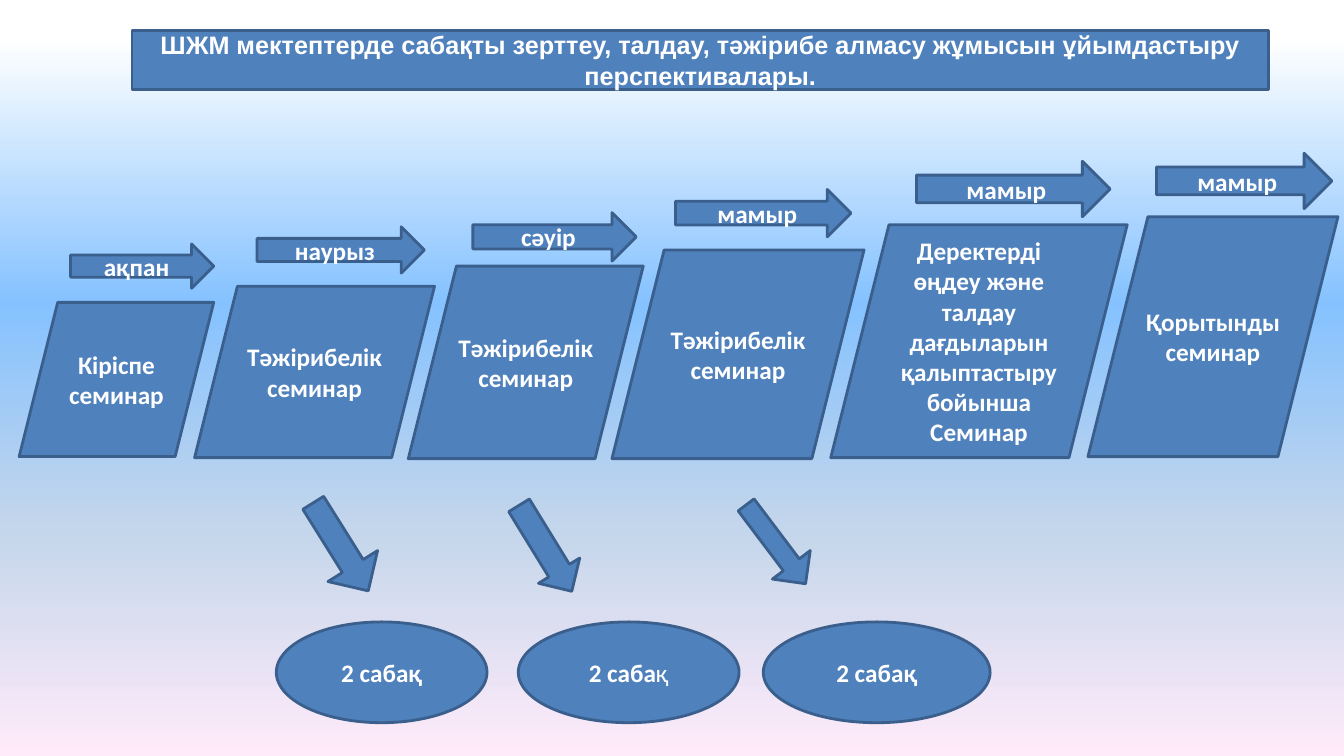
"""Build the slide on the seminar plan for small rural schools."""
from dataclasses import dataclass

import pptx
import pptx.dml.color
import pptx.enum.shapes
import pptx.enum.text
import pptx.oxml.ns
import pptx.util
from lxml import etree

Inches = pptx.util.Inches
Shape = pptx.enum.shapes.MSO_SHAPE


@dataclass(frozen=True)
class Theme:
    fill: str = "4F81BD"
    line: str = "3A5F8C"
    text: str = "FFFFFF"
    background: tuple = ((5, "FFFFFF"), (40, "85C2FF"), (70, "C4D6EB"), (100, "FFEBFA"))
    title_font: str = "Arial"
    body_font: str = "Calibri"
    text_size: int = 18
    line_width: int = 2


THEME = Theme()

TITLE = ("ШЖМ мектептерде сабақты зерттеу, талдау, тәжірибе алмасу "
         "жұмысын ұйымдастыру перспективалары.")

MONTHS = [
    ("ақпан", (0.7, 2.42, 1.42, 0.44)),
    ("наурыз", (2.55, 2.25, 1.66, 0.46)),
    ("сәуір", (4.69, 2.11, 1.62, 0.48)),
    ("мамыр", (6.7, 1.88, 1.74, 0.47)),
    ("мамыр", (9.09, 1.6, 1.92, 0.55)),
    ("мамыр", (11.47, 1.52, 1.74, 0.55)),
]

SEMINARS = [
    ("Кіріспе семинар", (0.19, 3, 1.93, 1.53)),
    ("Тәжірибелік семинар", (1.93, 2.84, 2.38, 1.7)),
    ("Тәжірибелік семинар", (4.05, 2.64, 2.33, 1.91)),
    ("Тәжірибелік семинар", (6.07, 2.48, 2.5, 2.07)),
    ("Деректерді өңдеу және талдау дағдыларын қалыптастыру бойынша Семинар",
     (8.24, 2.23, 2.94, 2.31)),
    ("Қорытынды семинар", (10.79, 2.15, 2.48, 2.38)),
]

LESSONS = [
    (("2 сабақ", ""), (2.74, 6.17, 2.09, 1)),
    (("2 саба", "қ"), (5.14, 6.17, 2.19, 1)),
    (("2 сабақ", ""), (7.57, 6.17, 2.25, 1)),
]

LESSON_ARROWS = [
    ((3.09, 4.91, 0.58, 1.03), 328, 0.42),
    ((5.17, 4.94, 0.48, 1), 328.5, 0.5),
    ((7.46, 4.91, 0.47, 0.98), 323, 0.42),
]


def rgb(value):
    """Return the colour for a hex value."""
    return pptx.dml.color.RGBColor.from_string(value)


def paint_background(page):
    """Fill the page with the vertical gradient of the theme."""
    fill = page.background.fill
    fill.gradient()
    fill.gradient_angle = 270
    qn = pptx.oxml.ns.qn
    stops = page.background._cSld.find(".//" + qn("a:gsLst"))
    for stop in list(stops):
        stops.remove(stop)
    for percent, colour in THEME.background:
        stop = etree.SubElement(stops, qn("a:gs"), pos=str(percent * 1000))
        etree.SubElement(stop, qn("a:srgbClr"), val=colour)


def add_block(page, kind, place):
    """Add a preset shape in the theme's fill and line."""
    block = page.shapes.add_shape(kind, *map(Inches, place))
    block.shadow.inherit = False
    block.fill.solid()
    block.fill.fore_color.rgb = rgb(THEME.fill)
    block.line.color.rgb = rgb(THEME.line)
    block.line.width = pptx.util.Pt(THEME.line_width)
    return block


def add_label(page, kind, place, text, font=THEME.body_font, light_ending=""):
    """Add a block with centred bold text and an optional regular ending."""
    frame = add_block(page, kind, place).text_frame
    frame.word_wrap = True
    frame.vertical_anchor = pptx.enum.text.MSO_ANCHOR.MIDDLE
    para = frame.paragraphs[0]
    para.alignment = pptx.enum.text.PP_ALIGN.CENTER
    para.font.name = font
    para.font.size = pptx.util.Pt(THEME.text_size)
    para.font.bold = True
    para.font.color.rgb = rgb(THEME.text)
    para.add_run().text = text
    if light_ending:
        span = para.add_run()
        span.text = light_ending
        span.font.bold = False


def add_lesson_arrow(page, place, angle, shaft):
    """Add a tilted arrow that leads from a seminar to its lessons."""
    arrow = add_block(page, Shape.DOWN_ARROW, place)
    arrow.rotation = angle
    arrow.adjustments[0] = shaft


def main():
    """Build and save the deck."""
    deck = pptx.Presentation()
    deck.slide_width, deck.slide_height = Inches(13.33), Inches(7.5)
    page = deck.slides.add_slide(deck.slide_layouts[6])
    paint_background(page)
    add_label(page, Shape.RECTANGLE, (1.31, 0.3, 11.27, 0.59), TITLE, THEME.title_font)
    for month, place in MONTHS:
        add_label(page, Shape.RIGHT_ARROW, place, month)
    for seminar, place in SEMINARS:
        add_label(page, Shape.PARALLELOGRAM, place, seminar)
    for (lesson, ending), place in LESSONS:
        add_label(page, Shape.OVAL, place, lesson, light_ending=ending)
    for place, angle, shaft in LESSON_ARROWS:
        add_lesson_arrow(page, place, angle, shaft)
    deck.save("out.pptx")


if __name__ == "__main__":
    main()
